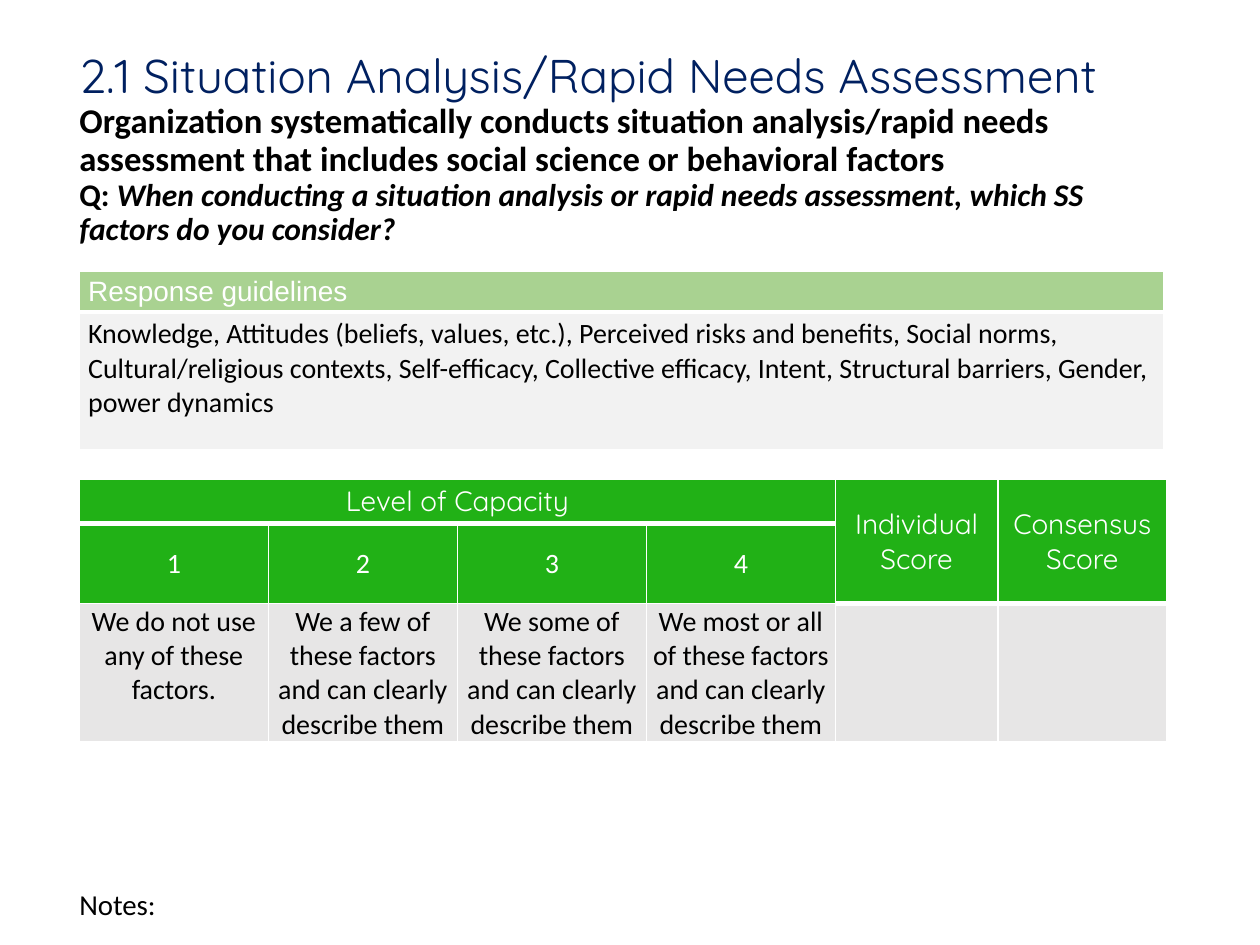
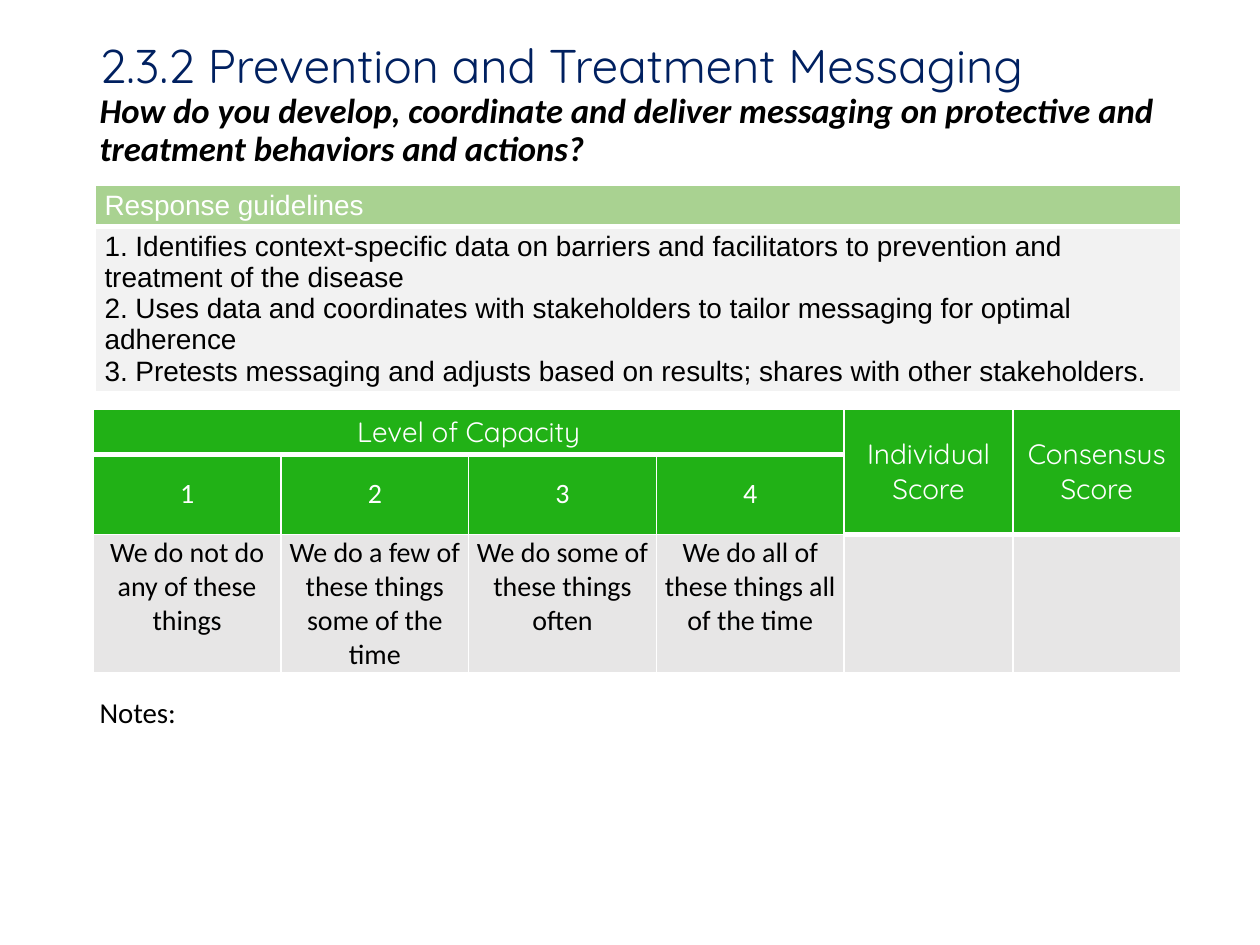
from dataclasses import dataclass

from lxml import etree
from pptx import Presentation
from pptx.dml.color import RGBColor
from pptx.enum.text import MSO_ANCHOR, MSO_AUTO_SIZE, PP_ALIGN
from pptx.oxml.ns import qn
from pptx.util import Inches, Pt

LEFT, CENTER = PP_ALIGN.LEFT, PP_ALIGN.CENTER
TOP, MIDDLE = MSO_ANCHOR.TOP, MSO_ANCHOR.MIDDLE
NO_AUTOFIT = MSO_AUTO_SIZE.NONE


@dataclass(frozen=True)
class Theme:
    """Colours, fonts and type sizes shared by the slides."""
    navy: str = "002060"
    black: str = "000000"
    white: str = "FFFFFF"
    green: str = "21B116"
    light_green: str = "A9D291"
    grey: str = "E7E6E6"
    pale_grey: str = "F2F2F2"
    display: str = "Quicksand"
    text: str = "Calibri"
    plain: str = "Arial"
    title_size: float = 27
    subtitle_size: float = 19.8
    question_size: float = 18
    body_size: float = 16.5
    table_size: float = 16
    thin: float = 1
    thick: float = 3


class Deck:
    """Holds the theme and the current slide, and draws each element."""

    PADDED = (0.07, 0.04, 0.07, 0.04)
    TIGHT = (0.01, 0.01, 0.01, 0)

    def __init__(self, theme):
        self.theme = theme
        self.prs = Presentation()
        self.prs.slide_width = Inches(10)
        self.prs.slide_height = Inches(7.5)

    def new_slide(self):
        self.s = self.prs.slides.add_slide(self.prs.slide_layouts[1])

    def style(self, font, name, size, color, bold=False, italic=False):
        font.name, font.size = name, Pt(size)
        font.bold, font.italic = bold, italic
        font.color.rgb = RGBColor.from_string(color)

    def place(self, sp, left, top, width, height):
        sp.left, sp.top = Inches(left), Inches(top)
        sp.width, sp.height = Inches(width), Inches(height)
        tf = sp.text_frame
        tf.word_wrap, tf.auto_size, tf.vertical_anchor = True, NO_AUTOFIT, TOP
        p = tf.paragraphs[0]
        p.alignment, p.line_spacing, p.space_before = LEFT, 0.9, Pt(0)
        return p

    def title(self, left, top, width, heading, *lines):
        t = self.theme
        p = self.place(self.s.shapes.title, left, top, width, 1.18)
        self.style(p.font, t.text, t.subtitle_size, t.black, True)
        r = p.add_run()
        r.text = heading
        self.style(r.font, t.display, t.title_size, t.navy)
        for line in lines:
            p.add_line_break()
            for text, size, italic in line:
                r = p.add_run()
                r.text = text
                self.style(r.font, t.text, size, t.black, True, italic)

    def body(self, left, top, text):
        t = self.theme
        p = self.place(self.s.placeholders[1], left, top, 8.62, 0.62)
        p.text = text
        self.style(p.font, t.text, t.body_size, t.black)
        pPr = p._p.get_or_add_pPr()
        pPr.set("marL", "0")
        pPr.set("indent", "0")
        pPr.insert_element_before(etree.Element(qn("a:buNone")), "a:defRPr")

    def table(self, left, top, cols, rows):
        frame = self.s.shapes.add_table(
            len(rows), len(cols), Inches(left), Inches(top),
            Inches(sum(cols)), Inches(sum(rows)))
        table = frame.table
        table.first_row = table.horz_banding = False
        for col, width in zip(table.columns, cols):
            col.width = Inches(width)
        for row, height in zip(table.rows, rows):
            row.height = Inches(height)
        return table

    def cell(self, cell, fill, bottom, margins=PADDED, anchor=TOP):
        t = self.theme
        tcPr = cell._tc.get_or_add_tcPr()
        for side in "LRTB":
            width = bottom if side == "B" else t.thin
            ln = etree.SubElement(tcPr, qn(f"a:ln{side}"), w=str(Pt(width)))
            solid = etree.SubElement(ln, qn("a:solidFill"))
            etree.SubElement(solid, qn("a:srgbClr"), val=t.white)
        cell.fill.solid()
        cell.fill.fore_color.rgb = RGBColor.from_string(fill)
        (cell.margin_left, cell.margin_top,
         cell.margin_right, cell.margin_bottom) = map(Inches, margins)
        cell.vertical_anchor = anchor

    def cell_text(self, cell, text, font, color, align=LEFT):
        cell.text = text
        for p in cell.text_frame.paragraphs:
            p.alignment = align
            self.style(p.font, font, self.theme.table_size, color)

    def guidelines(self, left, top, height, font, text):
        t = self.theme
        table = self.table(left, top, [8.61], [0.31, height])
        head, body = table.cell(0, 0), table.cell(1, 0)
        self.cell(head, t.light_green, t.thick)
        self.cell_text(head, "Response guidelines", t.plain, t.white)
        self.cell(body, t.pale_grey, t.thin)
        self.cell_text(body, text, font, t.black)

    def capacity(self, left, top, level_width, score_widths, answers):
        t = self.theme
        count = len(answers)
        cols = [level_width] * count + score_widths
        table = self.table(left, top, cols, [0.34, 0.62, 1.09])
        for col in range(len(cols)):
            level_bottom = t.thin if col < count else t.thick
            self.cell(table.cell(0, col), t.green, t.thick, anchor=MIDDLE)
            self.cell(table.cell(1, col), t.green, level_bottom, anchor=MIDDLE)
            self.cell(table.cell(2, col), t.grey, t.thin, self.TIGHT)
        table.cell(0, 0).merge(table.cell(0, count - 1))
        heads = {0: "Level of Capacity", count: "Individual Score",
                 count + 1: "Consensus Score"}
        for col, text in heads.items():
            if col:
                table.cell(0, col).merge(table.cell(1, col))
            self.cell_text(table.cell(0, col), text, t.display, t.white, CENTER)
        for col, answer in enumerate(answers):
            self.cell_text(table.cell(1, col), str(col + 1), t.text, t.white, CENTER)
            self.cell_text(table.cell(2, col), answer, t.text, t.black, CENTER)


def situation_analysis(deck):
    t = deck.theme
    deck.new_slide()
    deck.title(
        0.53, 0.37, 8.89, "2.1 Situation Analysis/Rapid Needs Assessment",
        [("Organization systematically conducts situation analysis/rapid needs "
          "assessment that includes social science or behavioral factors",
          t.subtitle_size, False)],
        [("Q: ", t.question_size, False),
         ("When conducting a situation analysis or rapid needs assessment, "
          "which SS factors do you consider?", t.question_size, True)])
    deck.body(0.53, 7.02, "Notes:")
    deck.capacity(0.63, 3.8, 1.5, [1.29, 1.34], [
        "We do not use any of these factors.",
        "We a few of these factors and can clearly describe them",
        "We some of these factors and can clearly describe them",
        "We most or all of these factors and can clearly describe them"])
    deck.guidelines(
        0.63, 2.15, 1.09, t.text,
        "Knowledge, Attitudes (beliefs, values, etc.), Perceived risks and "
        "benefits, Social norms, Cultural/religious contexts, Self-efficacy, "
        "Collective efficacy, Intent, Structural barriers, Gender, power dynamics")


def treatment_messaging(deck):
    t = deck.theme
    deck.new_slide()
    deck.title(
        0.69, 0.29, 8.99, "2.3.2 Prevention and Treatment Messaging",
        [("How do you develop, coordinate and deliver messaging on protective "
          "and treatment behaviors and actions?", t.subtitle_size, True)])
    deck.body(0.69, 5.49, "Notes:")
    deck.capacity(0.74, 3.25, 1.49, [1.34, 1.33], [
        "We do not do any of these things",
        "We do a few of these things some of the time",
        "We do some of these things often",
        "We do all of these things all of the time"])
    deck.guidelines(
        0.76, 1.47, 1.3, t.plain,
        "1. Identifies context-specific data on barriers and facilitators to "
        "prevention and treatment of the disease\n"
        "2. Uses data and coordinates with stakeholders to tailor messaging "
        "for optimal adherence\n"
        "3. Pretests messaging and adjusts based on results; shares with "
        "other stakeholders.")


def main():
    deck = Deck(Theme())
    situation_analysis(deck)
    treatment_messaging(deck)
    deck.prs.save("out.pptx")


if __name__ == "__main__":
    main()
